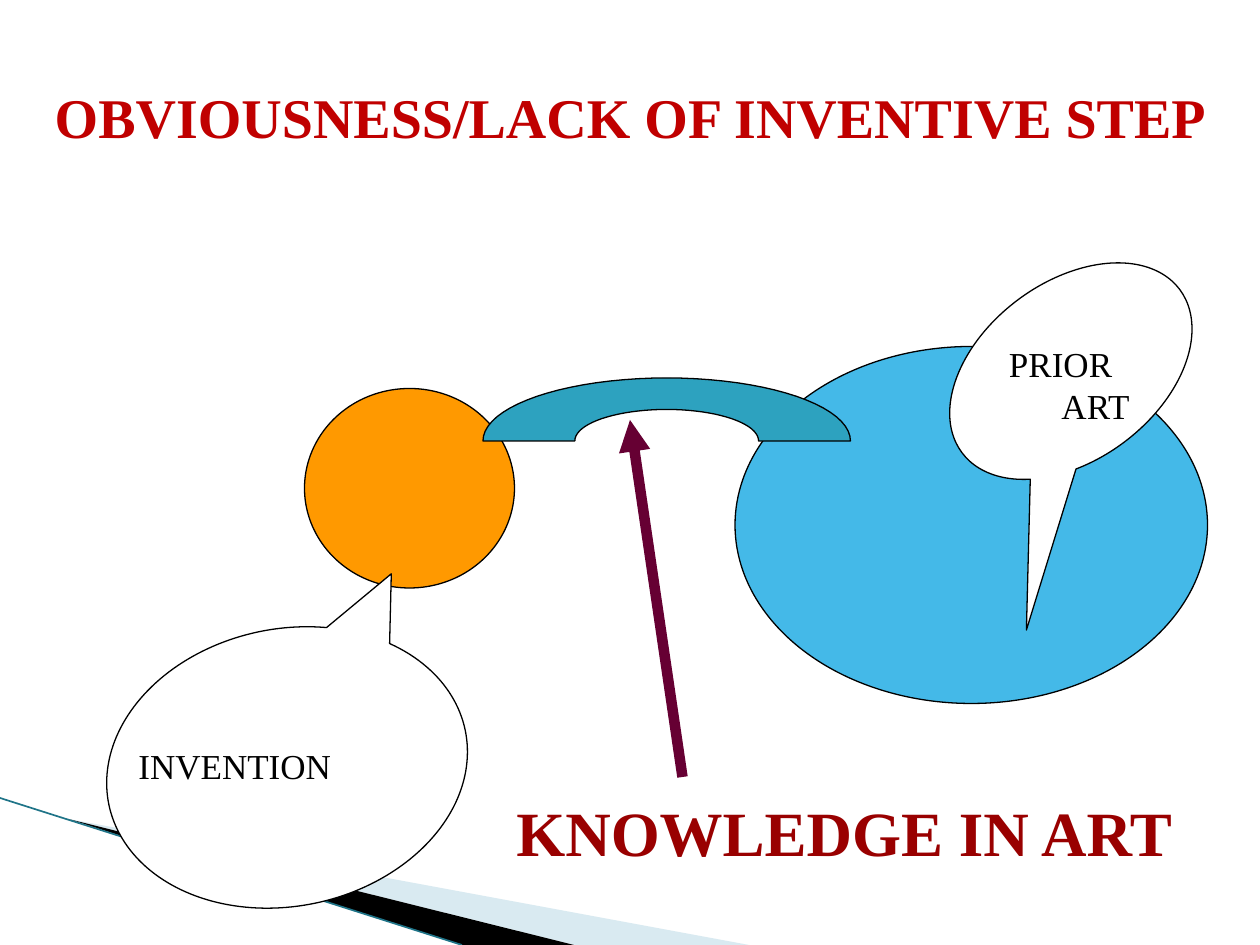
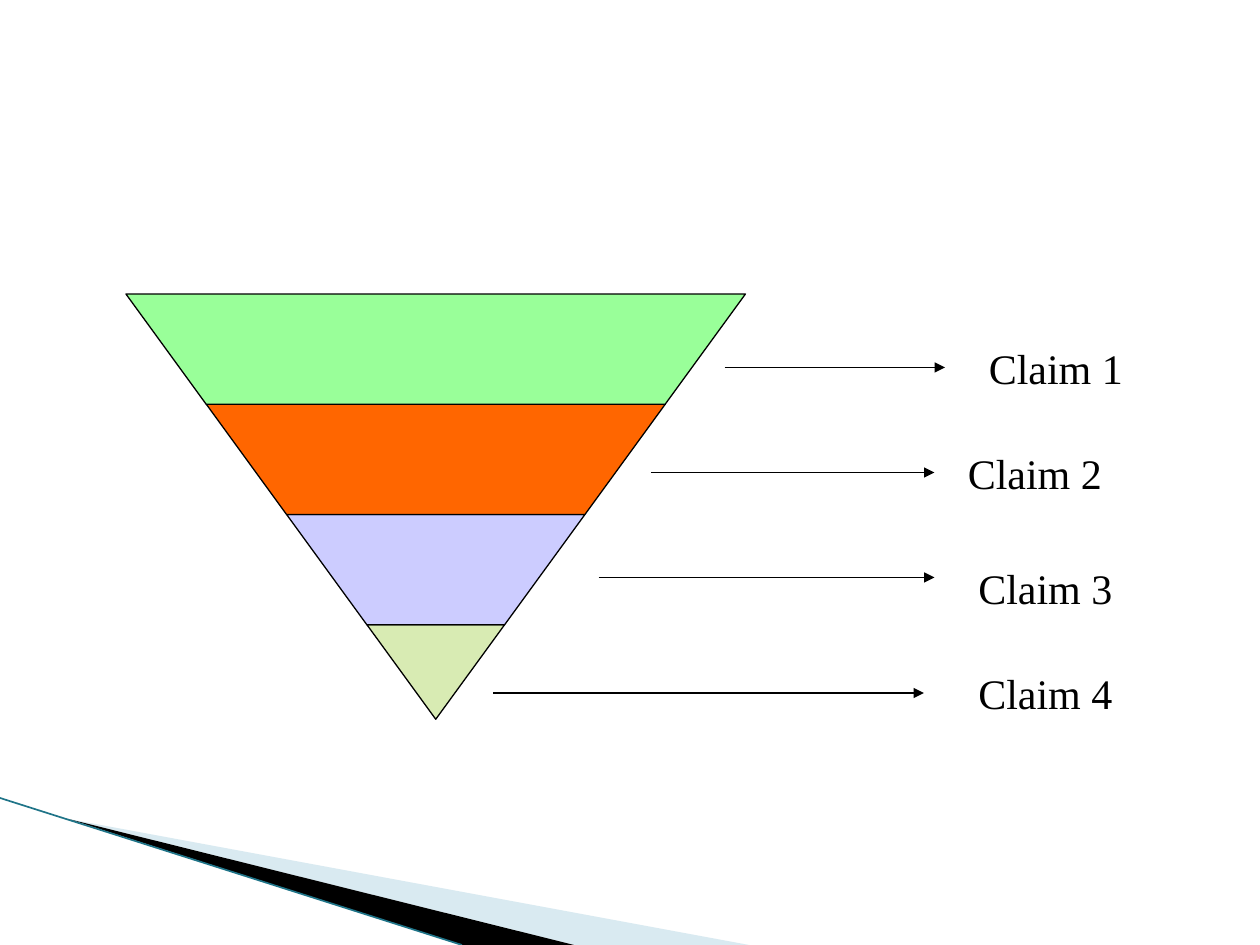
from math import cos, pi, sin

from pptx import Presentation
from pptx.dml.color import RGBColor
from pptx.enum.shapes import MSO_CONNECTOR, MSO_SHAPE
from pptx.enum.text import MSO_ANCHOR, MSO_AUTO_SIZE, PP_ALIGN
from pptx.oxml.ns import qn
from pptx.util import Pt
from lxml.etree import SubElement

FONT = "Times New Roman"
WIDTH, HEIGHT = 720, 540
BLACK, WHITE = "000000", "FFFFFF"
TITLE_RED, LABEL_RED, PLUM = "C00000", "990000", "660033"
SKY, ORANGE, TEAL = "44B9E8", "FF9900", "2DA2BF"
BAND_BLUE, BAND_EDGE = "A0CBDC", "1F7488"
CLAIM_FILLS = ["99FF99", "FF6600", "CCCCFF", "D8EBB3"]


def colour(value):
    """Return the colour for a hex string."""
    return RGBColor.from_string(value)


def style_shape(shape, fill, outline=BLACK):
    """Set fill and thin outline and drop the shadow."""
    shape.shadow.inherit = False
    shape.fill.solid()
    shape.fill.fore_color.rgb = colour(fill)
    if outline:
        shape.line.color.rgb = colour(outline)
        shape.line.width = Pt(0.75)
    else:
        shape.line.fill.background()
    return shape


def add_preset(slide, kind, left, top, width, height, fill):
    """Add an outlined preset shape."""
    shape = slide.shapes.add_shape(kind, Pt(left), Pt(top), Pt(width), Pt(height))
    return style_shape(shape, fill)


def add_callout(slide, left, top, width, height, rotation, tip):
    """Add a white, rotated speech bubble with its tip at the given adjustments."""
    shape = add_preset(slide, MSO_SHAPE.OVAL_CALLOUT, left, top, width, height, WHITE)
    shape.rotation = rotation
    shape.adjustments[0], shape.adjustments[1] = tip


def add_polygon(slide, points, fill, outline=BLACK):
    """Add a closed outline through the points."""
    corners = [(Pt(x), Pt(y)) for x, y in points]
    builder = slide.shapes.build_freeform(*corners[0])
    builder.add_line_segments(corners[1:], close=True)
    return style_shape(builder.convert_to_shape(), fill, outline)


def add_line(slide, start, end, line_colour, width, arrow=True):
    """Add a straight line, with an arrowhead at its end if wanted."""
    connector = slide.shapes.add_connector(
        MSO_CONNECTOR.STRAIGHT, *[Pt(value) for value in (*start, *end)])
    connector.line.color.rgb = colour(line_colour)
    connector.line.width = Pt(width)
    properties = connector._element.spPr
    if arrow:
        SubElement(properties.find(qn("a:ln")), qn("a:tailEnd"), type="triangle")
    SubElement(properties, qn("a:effectLst"))


def add_run(paragraph, text, size, text_colour, bold=False):
    """Add one formatted run."""
    run = paragraph.add_run()
    run.text = text
    run.font.name = FONT
    run.font.size = Pt(size)
    run.font.bold = bold
    run.font.color.rgb = colour(text_colour)


def add_text(slide, left, top, width, height, lines, size, text_colour=BLACK,
             bold=False, step=0):
    """Add a text box whose lines are each indented one step further."""
    box = slide.shapes.add_textbox(Pt(left), Pt(top), Pt(width), Pt(height))
    frame = box.text_frame
    frame.word_wrap = True
    for index, line in enumerate(lines):
        paragraph = frame.add_paragraph() if index else frame.paragraphs[0]
        if step:
            paragraph._p.get_or_add_pPr().set("marL", str(Pt(index * step)))
        add_run(paragraph, line, size, text_colour, bold)


def add_title(slide, box, text):
    """Move and format the title placeholder."""
    title = slide.shapes.title
    title.left, title.top, title.width, title.height = [Pt(value) for value in box]
    frame = title.text_frame
    frame.word_wrap = False
    frame.auto_size = MSO_AUTO_SIZE.NONE
    frame.vertical_anchor = MSO_ANCHOR.MIDDLE
    frame.paragraphs[0].alignment = PP_ALIGN.CENTER
    add_run(frame.paragraphs[0], text, 32, TITLE_RED, True)


def add_corner_bands(slide, box):
    """Draw the sweeping bands that fill the lower left corner."""
    left, top, width, height = box
    bottom = top + height
    tip = (left + 39, top + 12)
    light = add_polygon(
        slide, [tip, (left + width, bottom), (left + 328, bottom)], BAND_BLUE, None)
    fill_colour = light._element.spPr.find(qn("a:solidFill"))[0]
    SubElement(fill_colour, qn("a:alpha"), val="40000")
    add_polygon(slide, [tip, (left + 328, bottom), (left + 264, bottom)], BLACK, None)
    add_line(slide, (left, top), (left + 264, bottom), BAND_EDGE, 0.95, arrow=False)


def add_arch(slide, box, fill):
    """Draw the upper half of an elliptical ring with a half-size opening."""
    left, top, width, height = box
    steps = 40
    angles = [pi * step / steps for step in range(steps + 1)]

    def arc(scale, turn):
        return [(left + width / 2 * (1 - scale * cos(angle)),
                 top + height * (1 - scale * sin(angle))) for angle in turn]

    add_polygon(slide, arc(1, angles) + arc(0.5, reversed(angles)), fill)


def add_bridge_diagram(slide, box):
    """Show the invention and the prior art joined by knowledge in the art."""
    left, top, width, height = box
    add_preset(slide, MSO_SHAPE.OVAL, left + 360, top + 38, 270, 204, SKY)
    add_preset(slide, MSO_SHAPE.OVAL, left + 114, top + 62, 120, 114, ORANGE)
    add_callout(slide, left + 474.2, top + 1.3, 155.5, 101.5, 323.1, (-0.702, 1.015))
    add_text(slide, left + 509.5, top + 32.2, 88, 55.4, ["PRIOR", "ART"], 20, step=30)
    add_callout(slide, left, top + 199.3, 208, 158.4, 168.1, (-0.39, 0.606))
    add_text(slide, left + 12, top + 262, 124.6, 31, ["INVENTION"], 20)
    add_arch(slide, (left + 216, top + 56, 210, 36), TEAL)
    add_text(slide, left + 228, top + 290, width - 228, 50, ["KNOWLEDGE IN ART"],
             36, LABEL_RED, True)
    add_line(slide, (left + 330, top + 284), (left + 300, top + 80), PLUM, 6)


def add_claim_funnel(slide, box, band_height):
    """Draw an inverted triangle cut into one band for each claim."""
    left, top, width, height = box
    middle = left + width / 2
    last = len(CLAIM_FILLS) - 1
    for index in range(last, -1, -1):
        upper = index * band_height
        lower = height if index == last else upper + band_height
        upper_half, lower_half = [width / 2 * (1 - y / height) for y in (upper, lower)]
        points = [(middle - upper_half, top + upper), (middle + upper_half, top + upper),
                  (middle + lower_half, top + lower)]
        if lower_half:
            points.append((middle - lower_half, top + lower))
        add_polygon(slide, points, CLAIM_FILLS[index])


def add_claim_labels(slide, box):
    """Point an arrow from each funnel band to its claim."""
    left, top, width, height = box
    rows = [(132, 258, 18, 276, 0), (90, 252, 78, 264, 60),
            (60, 252, 138, 270, 126), (0, 246, 204, 270, 186)]
    for number, (start, end, level, label_left, label_top) in enumerate(rows, 1):
        add_line(slide, (left + start, top + level), (left + end, top + level), BLACK, 0.75)
        add_text(slide, left + label_left, top + label_top, 97, 36,
                 [f"Claim {number}"], 24)


def add_slide(presentation, layout_index):
    """Add a slide with the shared corner bands."""
    slide = presentation.slides.add_slide(presentation.slide_layouts[layout_index])
    add_corner_bands(slide, (0, 456, 428, 84))
    return slide


def build_obviousness_slide(presentation):
    """Build the slide on lack of inventive step."""
    slide = add_slide(presentation, 5)
    add_title(slide, (24, 44, 673, 45), "OBVIOUSNESS/LACK OF INVENTIVE STEP")
    add_bridge_diagram(slide, (60, 160, 630, 358))


def build_claims_slide(presentation):
    """Build the slide on narrowing claims."""
    slide = add_slide(presentation, 6)
    add_claim_funnel(slide, (72, 168, 354, 243), 63)
    add_claim_labels(slide, (282, 192, 373, 222))


def main():
    """Build and save the presentation."""
    presentation = Presentation()
    presentation.slide_width, presentation.slide_height = Pt(WIDTH), Pt(HEIGHT)
    build_obviousness_slide(presentation)
    build_claims_slide(presentation)
    presentation.save("out.pptx")


if __name__ == "__main__":
    main()
